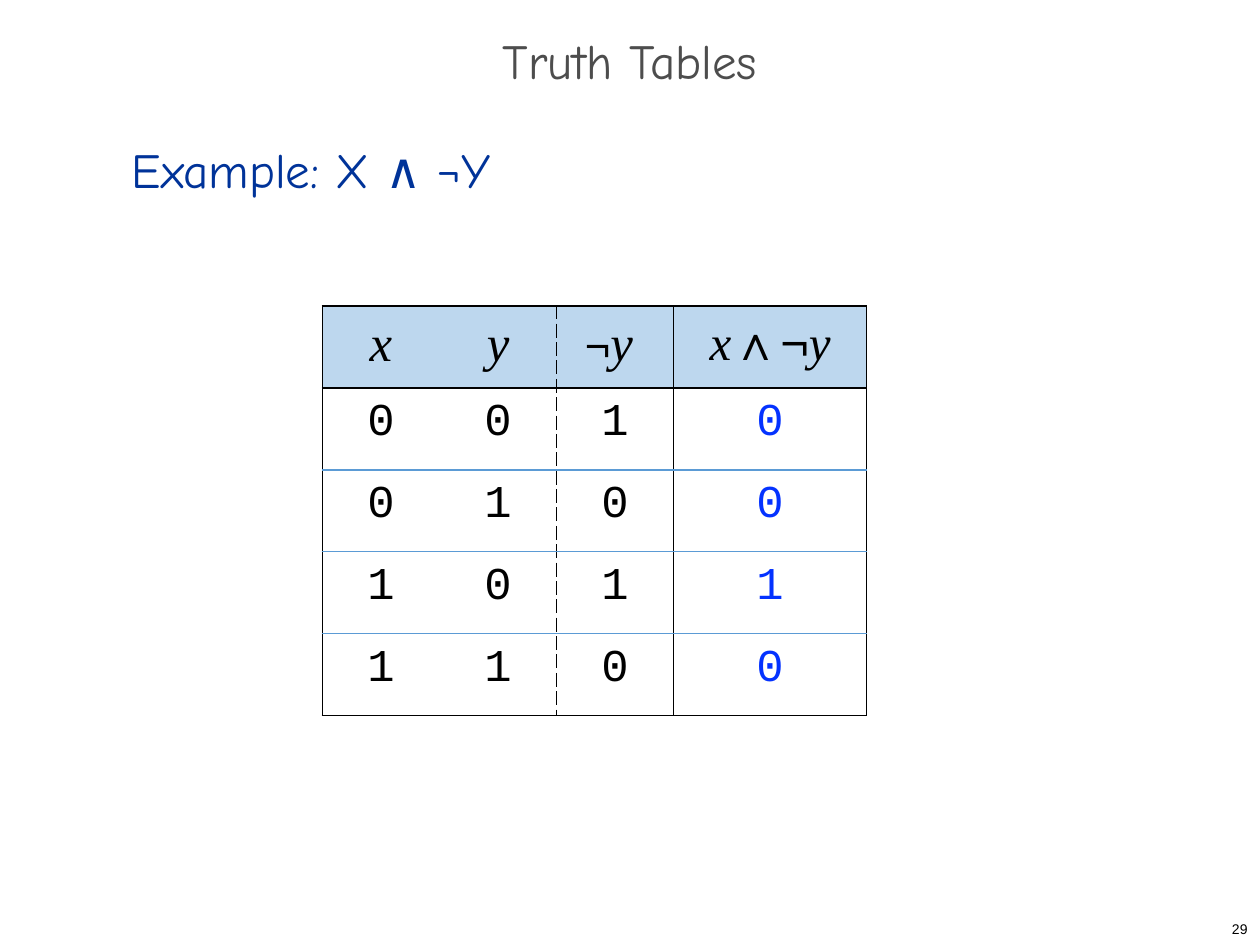
"""Build a slide with the truth table of X ∧ ¬Y."""
from lxml.etree import SubElement
from pptx import Presentation
from pptx.dml.color import RGBColor
from pptx.enum.text import MSO_ANCHOR as Anchor, PP_ALIGN as Align
from pptx.oxml.ns import qn
from pptx.util import Cm, Pt

COLORS = {
    "title": "4D4D4D",
    "example": "003399",
    "black": "000000",
    "result": "0432FF",
    "header": "BDD7EE",
    "body": "FFFFFF",
    "rule": "5B9BD5",
}


def format_run(run, font, size, color, italic=False):
    run.font.name = font
    run.font.size = Pt(size)
    run.font.italic = italic
    run.font.bold = False
    run.font.color.rgb = RGBColor.from_string(COLORS[color])


def add_border(cell, side, color, dash="solid"):
    properties = cell._tc.get_or_add_tcPr()
    line = SubElement(properties, qn(f"a:ln{side}"), w=str(Pt(1)))
    if color is None:
        SubElement(line, qn("a:noFill"))
        return
    fill = SubElement(line, qn("a:solidFill"))
    SubElement(fill, qn("a:srgbClr"), val=COLORS[color])
    SubElement(line, qn("a:prstDash"), val=dash)


presentation = Presentation()
presentation.slide_width = Cm(25.4)
presentation.slide_height = Cm(19.05)
slide = presentation.slides.add_slide(presentation.slide_layouts[6])

texts = [
    ("29", (20.12, 18.42, 5.28, 0.63), "Arial", 8, "black",
     Align.RIGHT, Anchor.MIDDLE, None, 0),
    ("Truth Tables", (0, 0.43, 25.4, 1.83), "Comic Neue", 28, "title",
     Align.CENTER, Anchor.MIDDLE, 0.7, 0),
    ("Example: X ∧ ¬Y", (2.41, 2.74, 20.35, 1.55), "Comic Neue", 28, "example",
     Align.LEFT, Anchor.TOP, Pt(32), 6),
]
for text, box, font, size, color, align, anchor, line_spacing, gap in texts:
    shape = slide.shapes.add_textbox(*map(Cm, box))
    text_frame = shape.text_frame
    text_frame.word_wrap = True
    text_frame.vertical_anchor = anchor
    text_frame.text = text
    paragraph = text_frame.paragraphs[0]
    paragraph.alignment = align
    paragraph.line_spacing = line_spacing
    paragraph.space_before = paragraph.space_after = Pt(gap)
    format_run(paragraph.runs[0], font, size, color)

header = [
    [("x", "Times New Roman", 29, True)],
    [("y", "Times New Roman", 29, True)],
    [("¬", "Arial", 25, False), ("y ", "Times New Roman", 29, True)],
    [("x", "Times New Roman", 28, True), ("∧", "Times New Roman", 28, False),
     ("¬", "Arial", 28, False), ("y", "Times New Roman", 28, True)],
]
values = [(x, y, 1 - y, x & (1 - y)) for x in (0, 1) for y in (0, 1)]
rows = [header] + [
    [[(str(value), "Courier New", 26, False)] for value in line] for line in values
]
column_widths = [2.36, 2.36, 2.36, 3.89]
row_height = 1.65
vertical_rules = [
    ("black", "solid"), (None, "solid"), ("black", "sysDash"),
    ("black", "solid"), ("black", "solid"),
]
horizontal_rules = ["black", "black", "rule", "rule", "rule", "black"]

table = slide.shapes.add_table(
    len(rows), len(column_widths), Cm(6.5), Cm(6.17),
    Cm(sum(column_widths)), Cm(row_height * len(rows)),
).table
table.first_row = table.horz_banding = False
for column, width in zip(table.columns, column_widths):
    column.width = Cm(width)

for row_index, row in enumerate(rows):
    table.rows[row_index].height = Cm(row_height)
    for column_index, pieces in enumerate(row):
        cell = table.cell(row_index, column_index)
        cell.margin_left = cell.margin_right = Cm(0.41)
        cell.margin_top = cell.margin_bottom = Cm(0.2)
        add_border(cell, "L", *vertical_rules[column_index])
        add_border(cell, "R", *vertical_rules[column_index + 1])
        add_border(cell, "T", horizontal_rules[row_index])
        add_border(cell, "B", horizontal_rules[row_index + 1])
        cell.fill.solid()
        fill_name = "header" if row_index == 0 else "body"
        cell.fill.fore_color.rgb = RGBColor.from_string(COLORS[fill_name])
        paragraph = cell.text_frame.paragraphs[0]
        paragraph.alignment = Align.CENTER
        color = "result" if row_index and column_index == 3 else "black"
        for text, font, size, italic in pieces:
            run = paragraph.add_run()
            run.text = text
            format_run(run, font, size, color, italic)

presentation.save("out.pptx")
